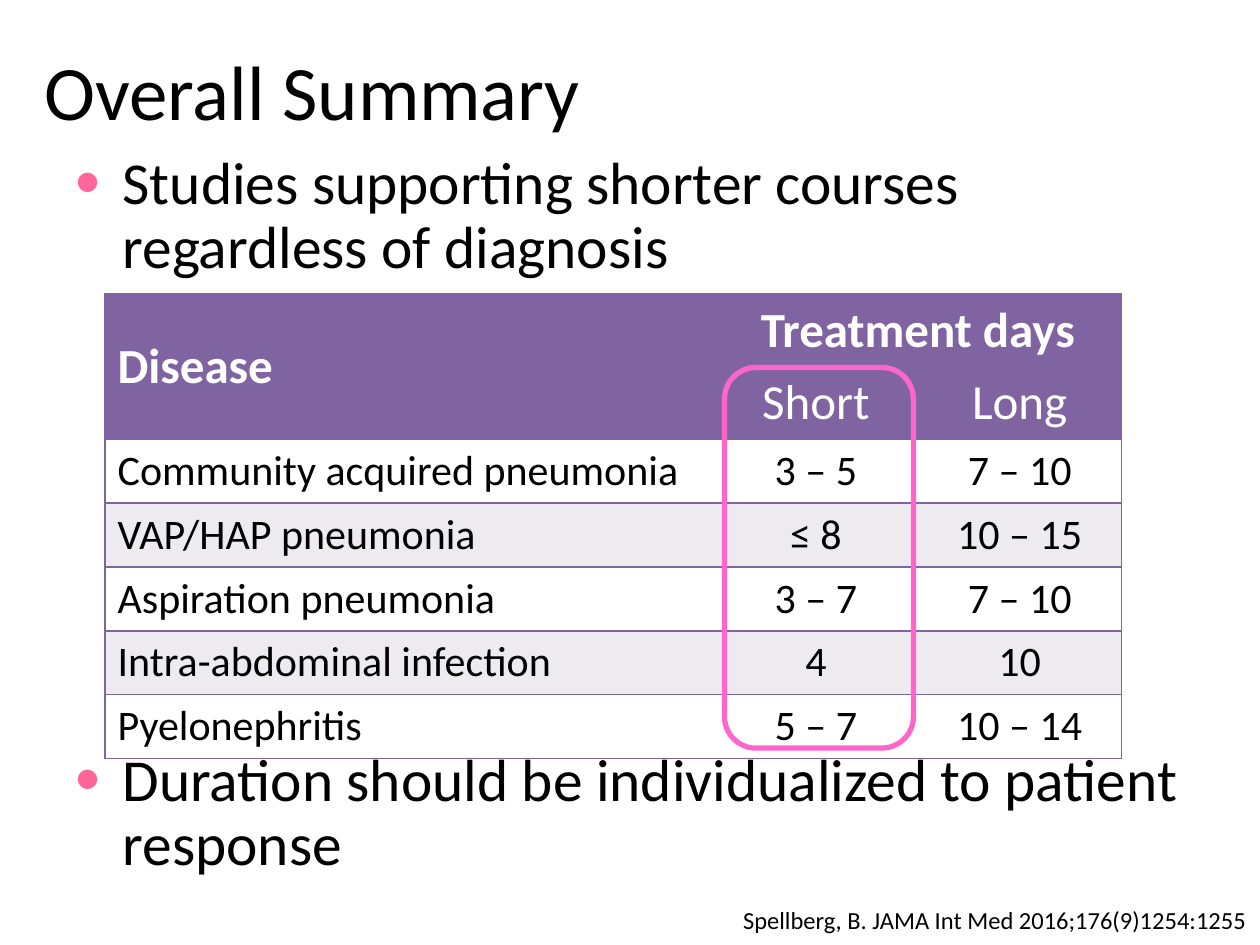
from dataclasses import dataclass

from lxml.etree import SubElement
from pptx import Presentation
from pptx.dml.color import RGBColor
from pptx.enum.shapes import MSO_SHAPE
from pptx.enum.text import MSO_ANCHOR, PP_ALIGN
from pptx.oxml.ns import qn
from pptx.util import Pt

BLACK, WHITE, PURPLE, LILAC = "000000", "FFFFFF", "8064A2", "EDEAF0"
BULLET_PINK, OUTLINE_PINK = "FF6699", "FF66CC"
NO_STYLE = "{2D5ABB26-0587-4C30-8999-92F81FD0307C}"
HEADER_HEIGHT, ROW_HEIGHT = 41.5, 36.5
COLUMN_WIDTHS = (348, 116.5, 116.5)


@dataclass
class Course:
    disease: str
    short: str
    long: str


@dataclass
class Bullet:
    text: str
    space_before: float


COURSES = [
    Course("Community acquired pneumonia", "3 – 5", "7 – 10"),
    Course("VAP/HAP pneumonia", "≤ 8", "10 – 15"),
    Course("Aspiration pneumonia", "3 – 7", "7 – 10"),
    Course("Intra-abdominal infection", "4", "10"),
    Course("Pyelonephritis", "5 – 7", "10 – 14"),
]
BULLETS = [
    Bullet("Studies supporting shorter courses regardless of diagnosis", 0),
    Bullet("Duration should be individualized to patient response", 267.5),
]


def colour(value: str) -> RGBColor:
    return RGBColor.from_string(value)


def write(para, text: str, size: float, ink: str = BLACK, align=PP_ALIGN.LEFT, bold=False) -> None:
    span = para.add_run()
    span.text = text
    para.alignment = align
    for name, value in {"name": "Calibri", "size": Pt(size), "bold": bold}.items():
        setattr(span.font, name, value)
    span.font.color.rgb = colour(ink)


def add_text_box(page, left: float, top: float, width: float, height: float):
    frame = page.shapes.add_textbox(Pt(left), Pt(top), Pt(width), Pt(height)).text_frame
    frame.word_wrap = True
    return frame


def add_bullet_mark(para) -> None:
    properties = para._p.get_or_add_pPr()
    properties.set("marL", str(Pt(27)))
    properties.set("indent", str(-Pt(27)))
    SubElement(SubElement(properties, qn("a:buClr")), qn("a:srgbClr"), val=BULLET_PINK)
    SubElement(properties, qn("a:buSzPct"), val="120000")
    SubElement(properties, qn("a:buFont"), typeface="Arial")
    SubElement(properties, qn("a:buChar"), char="•")


def add_borders(cell, sides: str) -> None:
    """Rule the named sides; must run before the cell is filled."""
    properties = cell._tc.get_or_add_tcPr()
    for side in sides:
        line = SubElement(properties, qn(f"a:ln{side}"), w=str(Pt(1)))
        SubElement(SubElement(line, qn("a:solidFill")), qn("a:srgbClr"), val=PURPLE)


def add_title(page) -> None:
    title = page.shapes.title
    for name, value in {"left": 0, "top": 6, "width": 648, "height": 90}.items():
        setattr(title, name, Pt(value))
    title.text_frame.vertical_anchor = MSO_ANCHOR.MIDDLE
    para = title.text_frame.paragraphs[0]
    para._p.get_or_add_pPr().set("marL", str(Pt(18)))
    write(para, "Overall Summary", 44)


def add_bullets(page) -> None:
    frame = add_text_box(page, 36, 84, 648, 456)
    for index, bullet in enumerate(BULLETS):
        para = frame.paragraphs[0] if index == 0 else frame.add_paragraph()
        add_bullet_mark(para)
        para.line_spacing = 0.9
        para.space_before = Pt(bullet.space_before)
        write(para, bullet.text, 34)


def add_course_table(page) -> None:
    heights = [HEADER_HEIGHT] * 2 + [ROW_HEIGHT] * len(COURSES)
    frame = page.shapes.add_table(len(heights), len(COLUMN_WIDTHS), Pt(60), Pt(168),
                                  Pt(sum(COLUMN_WIDTHS)), Pt(sum(heights)))
    table = frame.table
    table._tbl.tblPr.find(qn("a:tableStyleId")).text = NO_STYLE
    for column, width in zip(table.columns, COLUMN_WIDTHS):
        column.width = Pt(width)
    for row, height in zip(table.rows, heights):
        row.height = Pt(height)
    table.cell(0, 0).merge(table.cell(1, 0))
    table.cell(0, 1).merge(table.cell(0, 2))

    texts = [("Disease", "Treatment days", ""), ("", "Short", "Long")]
    texts += [(course.disease, course.short, course.long) for course in COURSES]
    for row, row_texts in enumerate(texts):
        header = row < 2
        fill = PURPLE if header else (WHITE, LILAC)[row % 2]
        for column, text in enumerate(row_texts):
            cell = table.cell(row, column)
            add_borders(cell, ("LTB", "TB", "RTB")[column])
            cell.fill.solid()
            cell.fill.fore_color.rgb = colour(fill)
            cell.vertical_anchor = MSO_ANCHOR.MIDDLE if header else MSO_ANCHOR.TOP
            if text:
                write(cell.text_frame.paragraphs[0], text, 28 if header else 24,
                      WHITE if header else BLACK,
                      PP_ALIGN.CENTER if column else PP_ALIGN.LEFT, row == 0)


def add_short_course_outline(page) -> None:
    outline = page.shapes.add_shape(MSO_SHAPE.ROUNDED_RECTANGLE,
                                    Pt(414), Pt(210), Pt(108), Pt(217.5))
    outline.shadow.inherit = False
    outline.fill.background()
    outline.line.color.rgb = colour(OUTLINE_PINK)
    outline.line.width = Pt(3)


def add_citation(page) -> None:
    frame = add_text_box(page, 264, 513.5, 455.5, 24.5)
    frame.vertical_anchor = MSO_ANCHOR.MIDDLE
    write(frame.paragraphs[0], "Spellberg, B. JAMA Int Med 2016;176(9)1254:1255", 14,
          align=PP_ALIGN.RIGHT)


def main() -> None:
    deck = Presentation()
    deck.slide_width, deck.slide_height = Pt(720), Pt(540)
    page = deck.slides.add_slide(deck.slide_layouts[5])
    add_bullets(page)
    add_title(page)
    add_course_table(page)
    add_short_course_outline(page)
    add_citation(page)
    deck.save("out.pptx")


if __name__ == "__main__":
    main()
